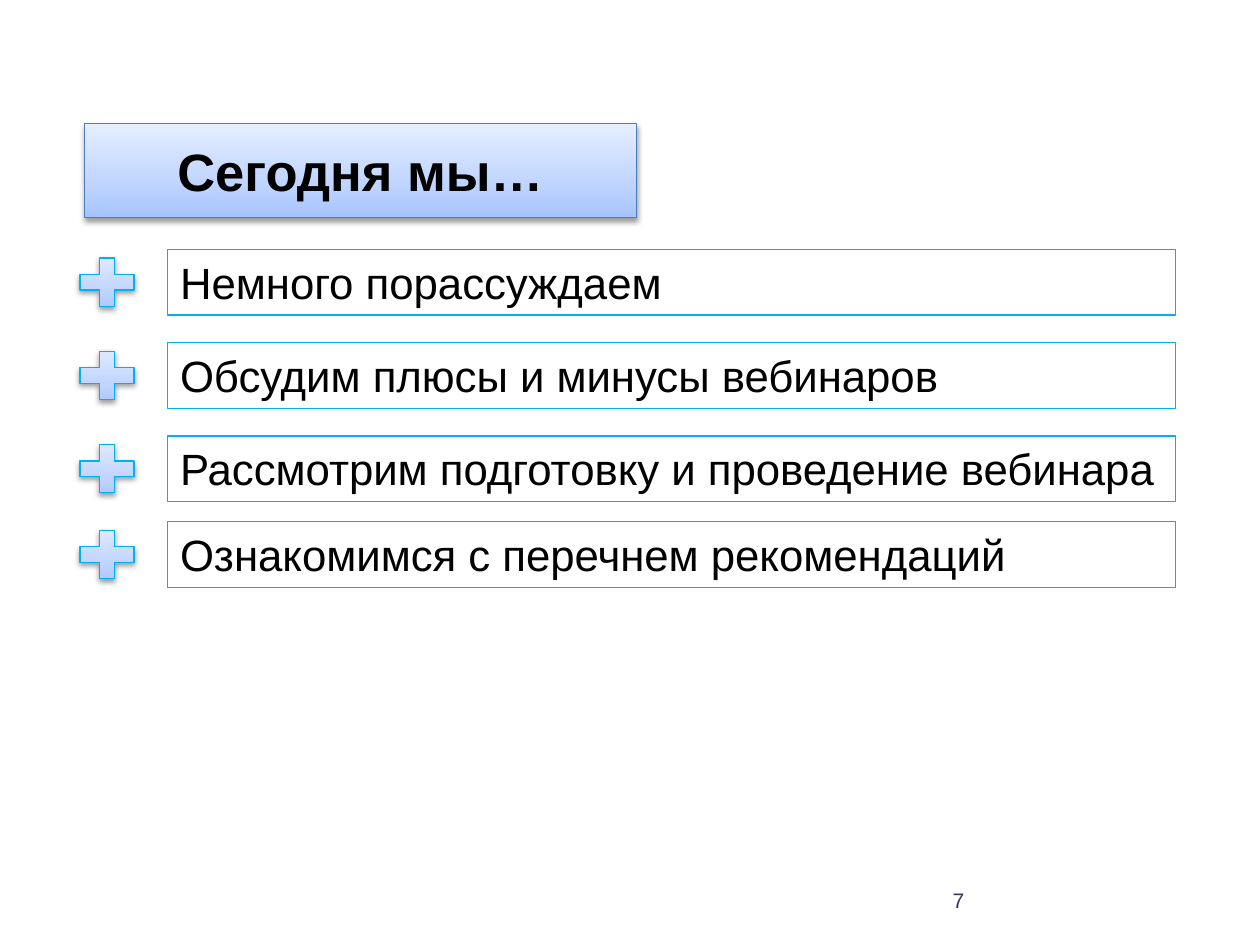
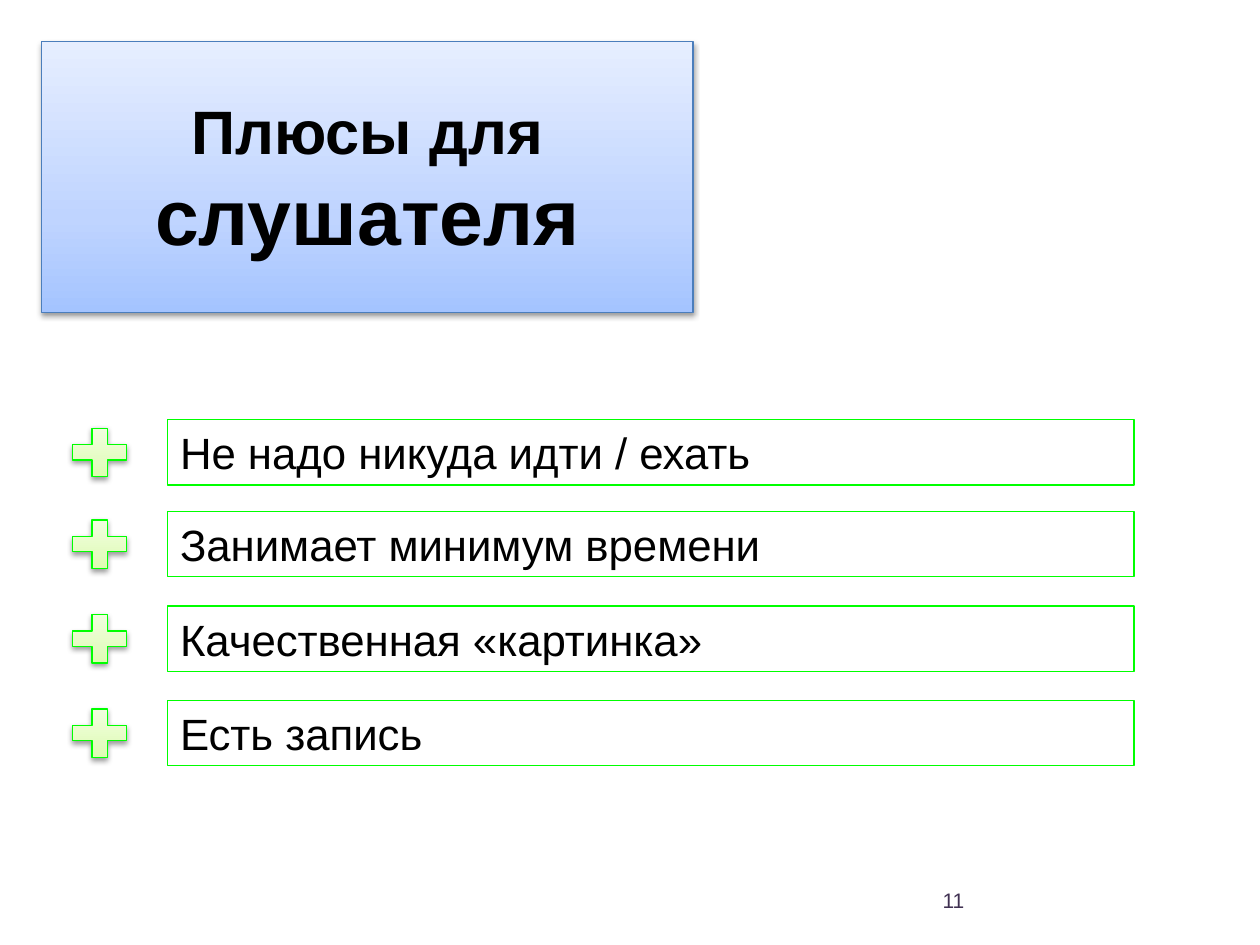
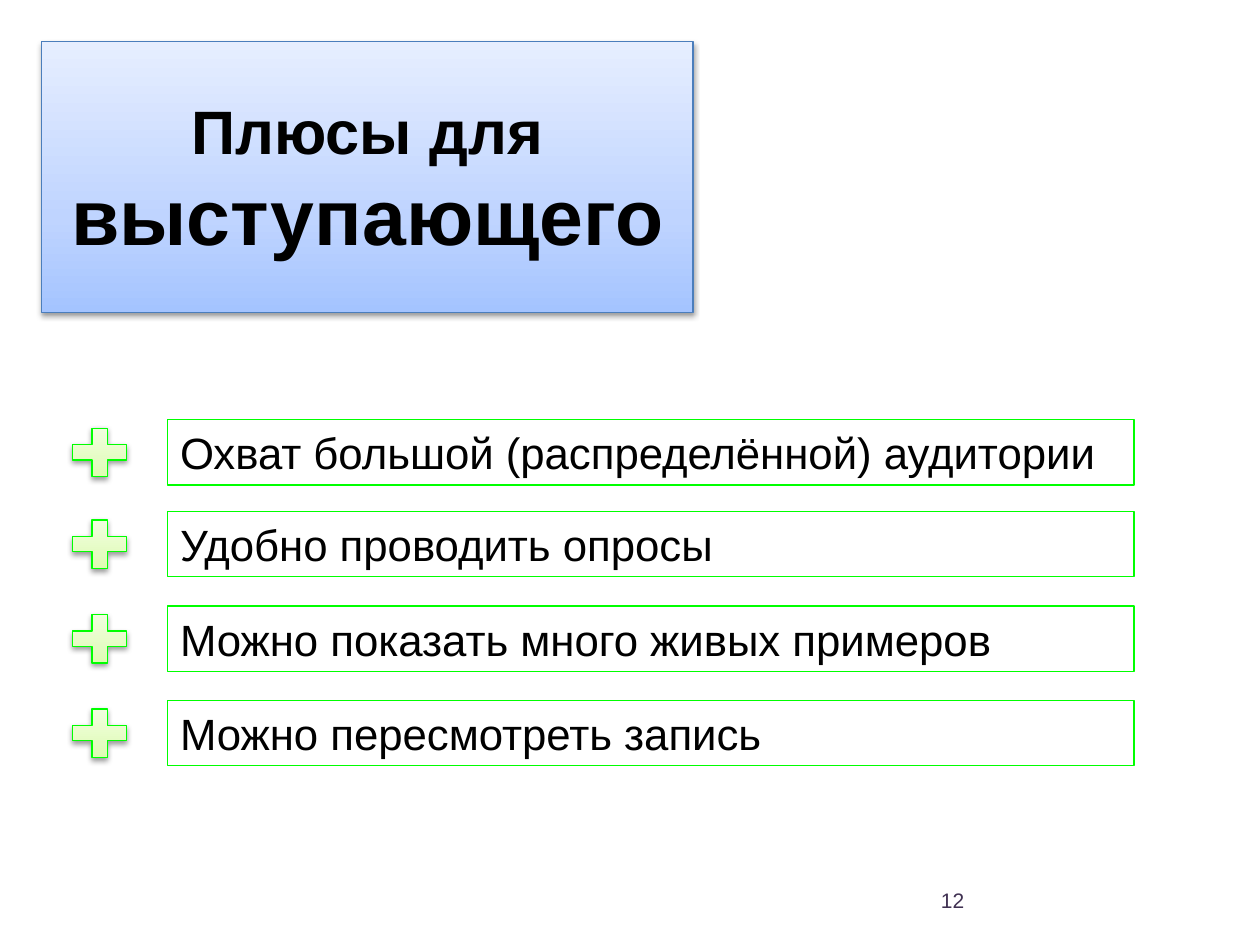
from copy import deepcopy

from lxml.etree import SubElement
from pptx import Presentation
from pptx.dml.color import RGBColor
from pptx.enum.shapes import MSO_SHAPE as SHAPE
from pptx.enum.text import MSO_ANCHOR as ANCHOR, PP_ALIGN as ALIGN
from pptx.oxml.ns import qn
from pptx.util import Cm, Pt

BLACK = "000000"
TITLE_LINE = "4B7EBC"
NUMBER_COLOR = "403152"
BLUE_STOPS = ("A4C4FF", "BFD4FF", "E6EEFF")
GREEN_STOPS = ("DAFDA7", "E4FCC2", "F5FFE7")
STOP_POSITIONS = (0, 0.35, 1)

# Line colour, plus gradient, plus left edge, box width and row tops (cm)
AGENDA = ("00B0F0", BLUE_STOPS, 1.42, 20.32, (5.03, 6.91, 8.79, 10.52))
BENEFITS = ("00FF00", GREEN_STOPS, 1.27, 19.48, (8.46, 10.31, 12.22, 14.12))

AGENDA_TITLE = (1.7, 2.49, 11.13, 1.9)
BENEFITS_TITLE = (0.84, 0.84, 13.13, 5.46)

SLIDES = [
    (7, AGENDA_TITLE, [("Сегодня мы…", 30)], AGENDA,
     ["Немного порассуждаем",
      "Обсудим плюсы и минусы вебинаров",
      "Рассмотрим подготовку и проведение вебинара",
      "Ознакомимся с перечнем рекомендаций"]),
    (11, BENEFITS_TITLE, [("Плюсы для ", 35), ("слушателя", 45)], BENEFITS,
     ["Не надо никуда идти / ехать",
      "Занимает минимум времени",
      "Качественная «картинка»",
      "Есть запись"]),
    (12, BENEFITS_TITLE, [("Плюсы для ", 35), ("выступающего", 45)], BENEFITS,
     ["Охват большой (распределённой) аудитории",
      "Удобно проводить опросы",
      "Можно показать много живых примеров",
      "Можно пересмотреть запись"]),
]


def rgb(color):
    return RGBColor.from_string(color)


class Deck:
    font = "Arial"
    line_width = Pt(0.75)
    row_height = 1.32
    box_left = 3.38

    def __init__(self):
        self.prs = Presentation()
        self.prs.slide_width, self.prs.slide_height = Cm(25.4), Cm(19.05)

    def new_slide(self):
        self.slide = self.prs.slides.add_slide(self.prs.slide_layouts[6])

    def outline(self, sp, color):
        sp.line.color.rgb = rgb(color)
        sp.line.width = self.line_width

    def set_text(self, sp, runs, color=BLACK, bold=False, align=ALIGN.LEFT, anchor=ANCHOR.TOP):
        """Fill the first paragraph with (text, size) runs."""
        tf = sp.text_frame
        tf.word_wrap = True
        tf.vertical_anchor = anchor
        p = tf.paragraphs[0]
        p.alignment = align
        for text, size in runs:
            r = p.add_run()
            r.text = text
            r.font.name, r.font.size, r.font.bold = self.font, Pt(size), bold
            r.font.color.rgb = rgb(color)

    def textbox(self, box, runs, **style):
        sp = self.slide.shapes.add_textbox(*map(Cm, box))
        self.set_text(sp, runs, **style)
        return sp

    def glossy(self, kind, box, stops, line):
        """Add a shape with a bottom-to-top gradient and a soft shadow."""
        sp = self.slide.shapes.add_shape(kind, *map(Cm, box))
        sp.fill.gradient()
        sp.fill.gradient_angle = 90
        spPr = sp._element.spPr
        gs_lst = spPr.find(".//" + qn("a:gsLst"))
        gs_lst.insert(1, deepcopy(gs_lst[0]))
        for stop, position, color in zip(sp.fill.gradient_stops, STOP_POSITIONS, stops):
            stop.position = position
            stop.color.rgb = rgb(color)
        self.outline(sp, line)
        sp.shadow.inherit = False
        shadow = SubElement(spPr.find(qn("a:effectLst")), qn("a:outerShdw"),
                            blurRad="40000", dist="20000", dir="5400000", rotWithShape="0")
        clr = SubElement(shadow, qn("a:srgbClr"), val=BLACK)
        SubElement(clr, qn("a:alpha"), val="38000")
        return sp

    def title(self, box, runs):
        sp = self.glossy(SHAPE.RECTANGLE, box, BLUE_STOPS, TITLE_LINE)
        self.set_text(sp, runs, bold=True, align=ALIGN.CENTER, anchor=ANCHOR.MIDDLE)

    def plus_list(self, items, line, stops, plus_left, box_width, tops):
        for text, top in zip(items, tops):
            sp = self.textbox((self.box_left, top, box_width, self.row_height), [(text, 25)])
            self.outline(sp, line)
            self.glossy(SHAPE.MATH_PLUS, (plus_left, top, 1.48, self.row_height), stops, line)

    def page_number(self, number):
        self.textbox((13.77, 17.65, 5.92, 1.01), [(str(number), 12)],
                     color=NUMBER_COLOR, align=ALIGN.RIGHT, anchor=ANCHOR.MIDDLE)


def main():
    deck = Deck()
    for number, title_box, title_runs, list_style, items in SLIDES:
        deck.new_slide()
        deck.page_number(number)
        deck.title(title_box, title_runs)
        deck.plus_list(items, *list_style)
    deck.prs.save("out.pptx")


if __name__ == "__main__":
    main()
